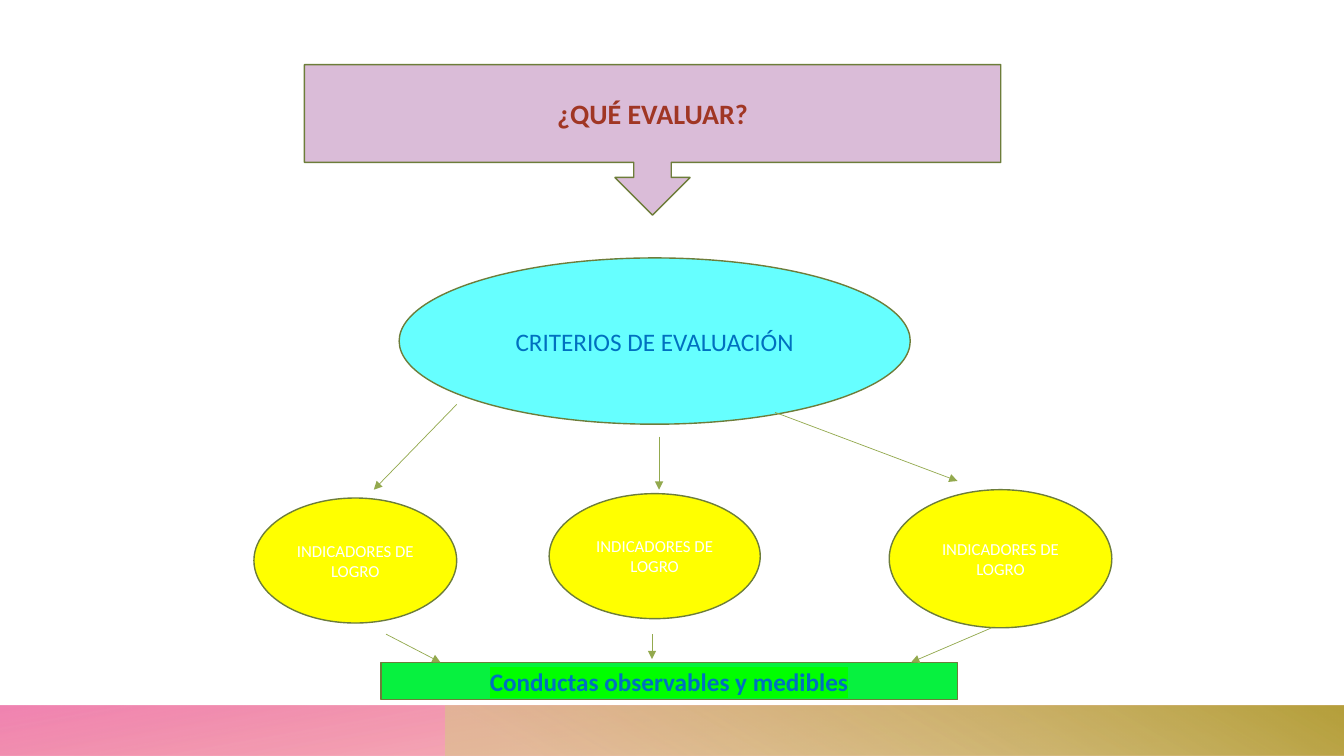
from dataclasses import dataclass

from lxml import etree
from pptx import Presentation
from pptx.dml.color import RGBColor
from pptx.enum.shapes import MSO_CONNECTOR, MSO_SHAPE
from pptx.enum.text import MSO_ANCHOR, PP_ALIGN
from pptx.oxml.ns import qn
from pptx.util import Cm, Pt

CALLOUT = MSO_SHAPE.DOWN_ARROW_CALLOUT
ELLIPSE = MSO_SHAPE.OVAL
RECTANGLE = MSO_SHAPE.RECTANGLE
STRAIGHT = MSO_CONNECTOR.STRAIGHT
CENTER = PP_ALIGN.CENTER
MIDDLE = MSO_ANCHOR.MIDDLE


@dataclass(frozen=True)
class Theme:
    """Colours, type sizes and line widths of the slide."""
    font: str = "Calibri"
    title_size: int = 20
    body_size: int = 18
    small_size: int = 12
    outline: str = "6D7D3A"
    arrow: str = "93A94E"
    outline_width: float = 1
    arrow_width: float = 0.5
    question_fill: str = "DABCD8"
    question_text: str = "A03624"
    criteria_fill: str = "66FFFF"
    blue_text: str = "0070C0"
    indicator_fill: str = "FFFF00"
    indicator_text: str = "FFFFFF"
    conduct_fill: str = "07F13F"
    highlight: str = "00FF00"
    pink_stops: tuple = ((14, "EB4E4F", 28), (100, "EE6EA5", 85))
    gold_stops: tuple = ((9, "D7C986", 55), (99, "B6A03C", 100))


class Diagram:
    """Draws the elements of the diagram on one slide."""

    def __init__(self, slide, theme):
        self.shapes = slide.shapes
        self.theme = theme

    def band(self, box, stops, angle, rotation=0):
        """Add a mirrored gradient band without outline."""
        band = self.shapes.add_shape(RECTANGLE, *map(Cm, box))
        band.shadow.inherit = False
        band.rotation = rotation
        band._element.spPr.find(qn("a:xfrm")).set("flipH", "1")
        band.line.fill.background()
        band.fill.gradient()
        band.fill.gradient_angle = 360 - angle
        for stop, (position, color, opacity) in zip(band.fill.gradient_stops, stops):
            stop.position = position / 100
            stop.color.rgb = RGBColor.from_string(color)
        for color, (_, _, opacity) in zip(band._element.spPr.iter(qn("a:srgbClr")), stops):
            etree.SubElement(color, qn("a:alpha")).set("val", str(opacity * 1000))

    def node(self, kind, box, text, fill, color, size, bold=False, highlight=None):
        """Add an outlined shape with centred text."""
        node = self.shapes.add_shape(kind, *map(Cm, box))
        node.shadow.inherit = False
        node.fill.solid()
        node.fill.fore_color.rgb = RGBColor.from_string(fill)
        node.line.color.rgb = RGBColor.from_string(self.theme.outline)
        node.line.width = Pt(self.theme.outline_width)
        frame = node.text_frame
        frame.word_wrap = True
        frame.vertical_anchor = MIDDLE
        paragraph = frame.paragraphs[0]
        paragraph.alignment = CENTER
        paragraph.font.name = self.theme.font
        paragraph.font.size = Pt(size)
        paragraph.font.bold = bold
        paragraph.font.color.rgb = RGBColor.from_string(color)
        run = paragraph.add_run()
        run.text = text
        if highlight:
            marker = etree.SubElement(run._r.get_or_add_rPr(), qn("a:highlight"))
            etree.SubElement(marker, qn("a:srgbClr")).set("val", highlight)

    def arrow(self, start, end):
        """Add a thin arrow that points at its end."""
        arrow = self.shapes.add_connector(STRAIGHT, *map(Cm, start + end))
        arrow.line.color.rgb = RGBColor.from_string(self.theme.arrow)
        arrow.line.width = Pt(self.theme.arrow_width)
        properties = arrow._element.spPr
        etree.SubElement(properties.find(qn("a:ln")), qn("a:tailEnd")).set("type", "triangle")
        etree.SubElement(properties, qn("a:effectLst"))


def main():
    """Build the slide and save it."""
    theme = Theme()
    presentation = Presentation()
    presentation.slide_width = Cm(33.87)
    presentation.slide_height = Cm(19.05)
    diagram = Diagram(presentation.slides.add_slide(presentation.slide_layouts[6]), theme)

    diagram.band((0, 17.78, 33.87, 1.27), theme.pink_stops, 100, rotation=180)
    diagram.band((11.22, 17.78, 22.65, 1.27), theme.gold_stops, 240)

    diagram.node(CALLOUT, (7.67, 1.63, 17.55, 3.79), "¿QUÉ EVALUAR?",
                 theme.question_fill, theme.question_text, theme.title_size, bold=True)
    diagram.node(ELLIPSE, (10.06, 6.5, 12.88, 4.19), "CRITERIOS DE EVALUACIÓN",
                 theme.criteria_fill, theme.blue_text, theme.body_size)

    indicators = (
        (22.41, 12.34, 5.61, 3.48),
        (13.84, 12.44, 5.32, 3.15),
        (6.4, 12.55, 5.11, 3.15),
    )
    for indicator in indicators:
        diagram.node(ELLIPSE, indicator, "INDICADORES DE LOGRO",
                     theme.indicator_fill, theme.indicator_text, theme.small_size)

    diagram.node(RECTANGLE, (9.6, 16.69, 14.53, 0.94), "Conductas observables y medibles",
                 theme.conduct_fill, theme.blue_text, theme.body_size,
                 bold=True, highlight=theme.highlight)

    criteria_to_indicators = (
        ((19.53, 10.39), (24.13, 12.12)),
        ((16.61, 11), (16.61, 12.34)),
        ((11.51, 10.19), (9.42, 12.34)),
    )
    indicators_to_conduct = (
        ((9.73, 15.98), (11.1, 16.69)),
        ((16.43, 15.98), (16.43, 16.61)),
        ((24.99, 15.82), (22.96, 16.69)),
    )
    for start, end in criteria_to_indicators + indicators_to_conduct:
        diagram.arrow(start, end)

    presentation.save("out.pptx")


if __name__ == "__main__":
    main()
